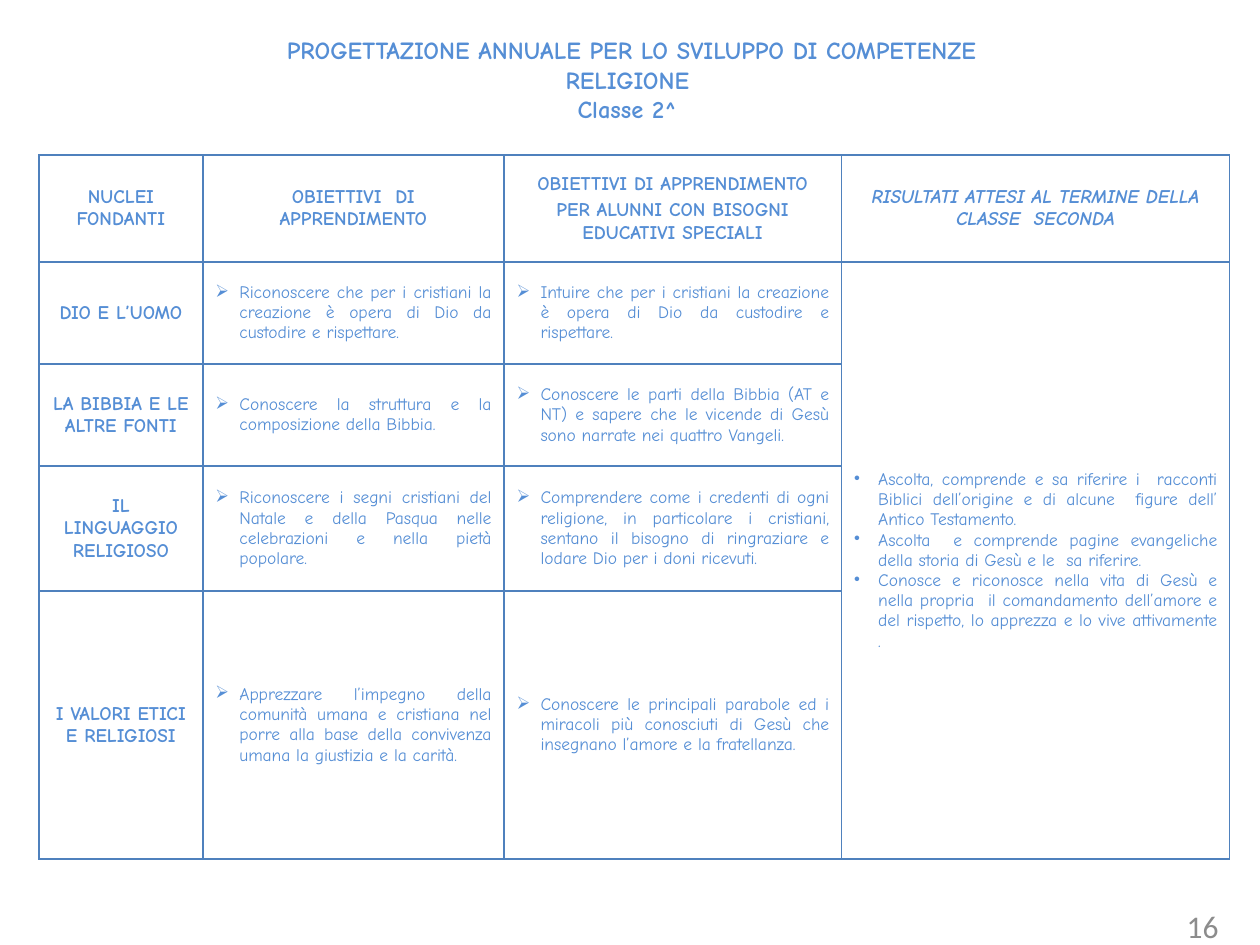
from lxml import etree
from pptx import Presentation
from pptx.dml.color import RGBColor
from pptx.enum.text import MSO_ANCHOR, PP_ALIGN
from pptx.oxml.ns import qn
from pptx.util import Inches, Pt

CENTER, JUSTIFY, RIGHT = PP_ALIGN.CENTER, PP_ALIGN.JUSTIFY, PP_ALIGN.RIGHT
MIDDLE = MSO_ANCHOR.MIDDLE
COLORS = {"text": "558ED5", "border": "4F81BD", "number": "8C8C8C"}
TEXT_FONT, NUMBER_FONT = "Comic Neue", "Calibri"
ARROW, DOT = "➢", "•"
COLUMN_WIDTHS = [1.3, 2.39, 2.68, 3.08]
ROW_HEIGHTS = [0.85, 0.81, 0.81, 0.99, 2.13]

TITLE = [
    "PROGETTAZIONE ANNUALE PER LO SVILUPPO DI COMPETENZE",
    "RELIGIONE ",
    "Classe 2^ ",
]
HEADERS = [
    ["NUCLEI FONDANTI"],
    ["OBIETTIVI  DI APPRENDIMENTO"],
    ["OBIETTIVI DI APPRENDIMENTO", "PER ALUNNI CON BISOGNI EDUCATIVI SPECIALI"],
    ["RISULTATI ATTESI AL TERMINE DELLA CLASSE  SECONDA"],
]
# Core topic, objective, objective for pupils with special needs
TOPICS = [
    ("DIO E L’UOMO",
     "Riconoscere che per i cristiani la creazione è opera di Dio da custodire e rispettare.",
     "Intuire che per i cristiani la creazione è opera di Dio da custodire e rispettare."),
    ("LA BIBBIA E LE ALTRE FONTI",
     "Conoscere la struttura e la composizione della Bibbia. ",
     "Conoscere le parti della Bibbia (AT e NT) e sapere che le vicende di Gesù "
     "sono narrate nei quattro Vangeli."),
    ("IL LINGUAGGIO RELIGIOSO",
     "Riconoscere i segni cristiani del Natale e della Pasqua nelle celebrazioni "
     "e nella pietà popolare.",
     "Comprendere come i credenti di ogni religione, in particolare i cristiani, "
     "sentano il bisogno di ringraziare e lodare Dio per i doni ricevuti."),
    ("I VALORI ETICI E RELIGIOSI",
     "Apprezzare l’impegno della comunità umana e cristiana nel porre alla base "
     "della convivenza umana la giustizia e la carità.",
     "Conoscere le principali parabole ed i miracoli più conosciuti di Gesù che "
     "insegnano l’amore e la fratellanza."),
]
RESULTS = [
    "Ascolta, comprende e sa riferire i  racconti Biblici dell’origine e di alcune  "
    "figure dell’ Antico Testamento.",
    "Ascolta  e comprende pagine evangeliche della storia di Gesù e le  sa riferire.",
    "Conosce e riconosce nella vita di Gesù e nella propria  il comandamento dell’amore "
    "e del rispetto, lo apprezza e lo vive attivamente . ",
]


def add_bullet(paragraph, character):
    properties = paragraph._p.get_or_add_pPr()
    properties.set("marL", str(Inches(0.19)))
    properties.set("indent", str(-Inches(0.19)))
    etree.SubElement(properties, qn("a:buChar")).set("char", character)


def write_text(frame, lines, size, bold=False, italic=False, align=CENTER,
               color="text", font=TEXT_FONT, bullet=None, space_before=0):
    for index, line in enumerate(lines):
        paragraph = frame.add_paragraph() if index else frame.paragraphs[0]
        paragraph.text = line
        if bullet:
            add_bullet(paragraph, bullet)
        paragraph.alignment = align
        paragraph.space_before = Pt(space_before)
        paragraph.font.name = font
        paragraph.font.size = Pt(size)
        paragraph.font.bold = bold
        paragraph.font.italic = italic
        paragraph.font.color.rgb = RGBColor.from_string(COLORS[color])


def add_text_box(slide, left, top, width, height, lines, size, wrap=True, anchor=None, **style):
    shape = slide.shapes.add_textbox(Inches(left), Inches(top), Inches(width), Inches(height))
    frame = shape.text_frame
    frame.word_wrap = wrap
    frame.vertical_anchor = anchor
    write_text(frame, lines, size, **style)


def format_cell(cell):
    cell.fill.background()
    cell.vertical_anchor = MIDDLE
    properties = cell._tc.get_or_add_tcPr()
    for index, side in enumerate(("lnL", "lnR", "lnT", "lnB")):
        line = etree.Element(qn(f"a:{side}"), w=str(Pt(1)))
        fill = etree.SubElement(line, qn("a:solidFill"))
        etree.SubElement(fill, qn("a:srgbClr")).set("val", COLORS["border"])
        properties.insert(index, line)


def add_grid(slide, left, top):
    frame = slide.shapes.add_table(
        len(ROW_HEIGHTS), len(COLUMN_WIDTHS), Inches(left), Inches(top),
        Inches(sum(COLUMN_WIDTHS)), Inches(sum(ROW_HEIGHTS)))
    table = frame.table
    table.first_row = table.horz_banding = False
    for column, width in zip(table.columns, COLUMN_WIDTHS):
        column.width = Inches(width)
    for row, height in zip(table.rows, ROW_HEIGHTS):
        row.height = Inches(height)
    for cell in table.iter_cells():
        format_cell(cell)
    return table


def fill_grid(table):
    # Header row, last heading in italics
    last = len(HEADERS) - 1
    for column, lines in enumerate(HEADERS):
        write_text(table.cell(0, column).text_frame, lines, 11, bold=True,
                   italic=column == last, space_before=2.2)

    # One row per core topic
    for row, (topic, *objectives) in enumerate(TOPICS, start=1):
        write_text(table.cell(row, 0).text_frame, [topic], 11, bold=True)
        for column, objective in enumerate(objectives, start=1):
            write_text(table.cell(row, column).text_frame, [objective], 10,
                       align=JUSTIFY, bullet=ARROW, space_before=2)

    # Expected results span all topics
    results = table.cell(1, last)
    results.merge(table.cell(len(TOPICS), last))
    write_text(results.text_frame, RESULTS, 10, align=JUSTIFY, bullet=DOT)


def main():
    presentation = Presentation()
    presentation.slide_width, presentation.slide_height = Inches(10), Inches(7.5)
    slide = presentation.slides.add_slide(presentation.slide_layouts[6])

    # Title
    add_text_box(slide, 1.68, 0.23, 6.67, 0.81, TITLE, 14, wrap=False, bold=True)
    # Planning table
    fill_grid(add_grid(slide, 0.31, 1.23))
    # Page number
    add_text_box(slide, 9.02, 7.14, 0.75, 0.42, ["16"], 18, anchor=MIDDLE,
                 align=RIGHT, color="number", font=NUMBER_FONT)

    presentation.save("out.pptx")


if __name__ == "__main__":
    main()
